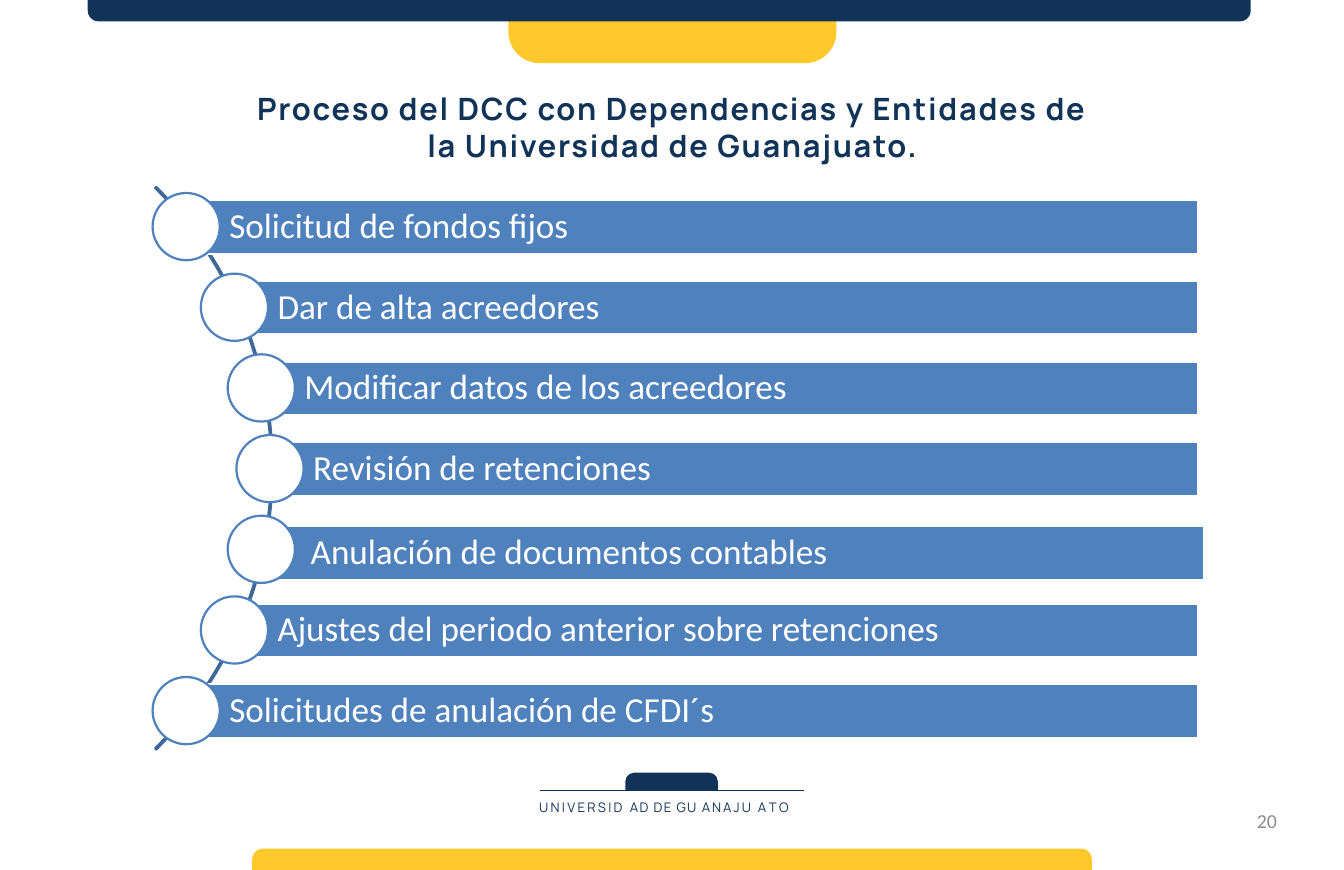
from pptx import Presentation
from pptx.dml.color import RGBColor
from pptx.enum.shapes import MSO_CONNECTOR as CONNECTOR, MSO_SHAPE as SHAPE
from pptx.enum.text import MSO_ANCHOR as ANCHOR, MSO_AUTO_SIZE as AUTO_SIZE, PP_ALIGN as ALIGN
from pptx.oxml.ns import qn
from pptx.util import Emu, Pt
from lxml import etree

PX = 9144  # 100 px to the inch
COLORS = {
    "navy": "123358", "yellow": "FFC82B", "blue": "4F81BD",
    "arc": "3F6797", "white": "FFFFFF", "gray": "8C8C8C",
}
STEPS = [
    "Solicitud de fondos fijos",
    "Dar de alta acreedores",
    "Modificar datos de los acreedores",
    "Revisión de retenciones",
    "Anulación de documentos contables",
    "Ajustes del periodo anterior sobre retenciones",
    "Solicitudes de anulación de CFDI´s",
]
# Text and letter spacing in points
WORDMARK = [("UNIVERSID ", 2.1), ("AD DE GU ", 1.2), ("ANAJU ", 1.9), ("A T ", 0), ("O", -0.5)]


def px(*lengths):
    return [Emu(length * PX) for length in lengths]


def color(name):
    return RGBColor.from_string(COLORS[name])


def add_shape(slide, kind, box, fill=None, line=None):
    shape = slide.shapes.add_shape(kind, *px(*box))
    shape.shadow.inherit = False
    if fill:
        shape.fill.solid()
        shape.fill.fore_color.rgb = color(fill)
    else:
        shape.fill.background()
    if line:
        shape.line.color.rgb = color(line)
        shape.line.width = Pt(2)
    else:
        shape.line.fill.background()
    return shape


def set_frame(frame, margins=(0, 0, 0, 0), anchor=ANCHOR.TOP):
    frame.word_wrap = True
    frame.auto_size = AUTO_SIZE.NONE
    frame.vertical_anchor = anchor
    frame.margin_left, frame.margin_top, frame.margin_right, frame.margin_bottom = px(*margins)


def format_run(run, size, font, color_name, bold=False, spacing=0):
    run.font.size = Pt(size)
    run.font.name = font
    run.font.bold = bold
    run.font.color.rgb = color(color_name)
    if spacing:
        run._r.get_or_add_rPr().set("spc", str(round(spacing * 100)))


def add_tab(slide, box, fill, rounded_top):
    tab = add_shape(slide, SHAPE.ROUND_2_SAME_RECTANGLE, box, fill)
    tab.adjustments[0], tab.adjustments[1] = (0.5, 0) if rounded_top else (0, 0.5)


def add_frame_tabs(slide, width, height):
    center = width // 2 + 0
    add_tab(slide, (center - 207, 0, 415, 80), "yellow", False)
    add_tab(slide, (center - 739, 0, 1471, 27), "navy", False)
    add_tab(slide, (center - 531, height - 27, 1062, 27), "yellow", True)


def add_title(slide, box):
    title = slide.shapes.title
    title.left, title.top, title.width, title.height = px(*box)
    set_frame(title.text_frame, (0, 1, 0, 0))
    title.text_frame.text = "Proceso del DCC con Dependencias y Entidades de la Universidad de Guanajuato."
    paragraph = title.text_frame.paragraphs[0]
    paragraph.alignment = ALIGN.CENTER
    format_run(paragraph.runs[0], 28, "Manrope", "navy", True, 1.6)


def add_process(slide, box):
    left, top, width, height = box
    # Guiding arc: only its right-hand quarter is drawn
    diameter = 1006
    arc = add_shape(slide, SHAPE.BLOCK_ARC,
                    (left + 152 - diameter, top + (height - diameter) // 2, diameter, diameter),
                    line="arc")
    for index, value in enumerate((189, 27, 0.002)):
        arc.adjustments[index] = value

    # Bars start at the centre of their circle, symmetric about the middle step
    circle, bar_height, pitch = 85, 68, 102
    indents = (149, 104, 138, 43)
    indents = (149, 138, 104, 43)
    middle = len(STEPS) // 2
    for index, step in enumerate(STEPS):
        indent = indents[abs(index - middle)]
        circle_top = top + index * pitch
        shift_x, shift_y = (8, 4) if index == 4 else (0, 0)
        bar = add_shape(slide, SHAPE.RECTANGLE,
                        (left + indent + shift_x, circle_top + 9 + shift_y, width - indent, bar_height),
                        "blue", "white")
        set_frame(bar.text_frame, (54, 9, 9, 9), ANCHOR.MIDDLE)
        bar.text_frame.text = step
        paragraph = bar.text_frame.paragraphs[0]
        paragraph.alignment = ALIGN.LEFT
        paragraph.line_spacing = 0.9
        format_run(paragraph.runs[0], 32, "Calibri", "white")
        add_shape(slide, SHAPE.OVAL, (left + indent - 43, circle_top, circle, circle), "white", "blue")


def add_wordmark(slide, box):
    left, top, width, height = box
    rule_top = top + 22
    add_tab(slide, (left + 109, top, 117, 22), "navy", True)
    rule = slide.shapes.add_connector(
        CONNECTOR.STRAIGHT, *px(left + 1, rule_top, left + width - 1, rule_top))
    rule.line.color.rgb = color("navy")
    rule.line.width = Pt(0.5)
    etree.SubElement(rule._element.spPr, qn("a:effectLst"))

    text_box = slide.shapes.add_textbox(*px(left, top + 34, width, height - 34))
    set_frame(text_box.text_frame)
    paragraph = text_box.text_frame.paragraphs[0]
    for text, spacing in WORDMARK:
        run = paragraph.add_run()
        run.text = text
        format_run(run, 12, "Manrope", "navy", spacing=spacing)


def add_page_number(slide, box):
    text_box = slide.shapes.add_textbox(*px(*box))
    set_frame(text_box.text_frame)
    text_box.text_frame.text = "20"
    paragraph = text_box.text_frame.paragraphs[0]
    paragraph.alignment = ALIGN.RIGHT
    format_run(paragraph.runs[0], 18, "Calibri", "gray")


def main():
    width, height = 1700, 1100
    presentation = Presentation()
    presentation.slide_width, presentation.slide_height = px(width, height)
    slide = presentation.slides.add_slide(presentation.slide_layouts[5])
    add_frame_tabs(slide, width, height)
    add_title(slide, (317, 113, 1067, 96))
    add_process(slide, (193, 244, 1322, 697))
    add_wordmark(slide, (682, 977, 336, 56))
    add_page_number(slide, (1224, 1023, 391, 55))
    presentation.save("out.pptx")


if __name__ == "__main__":
    main()
